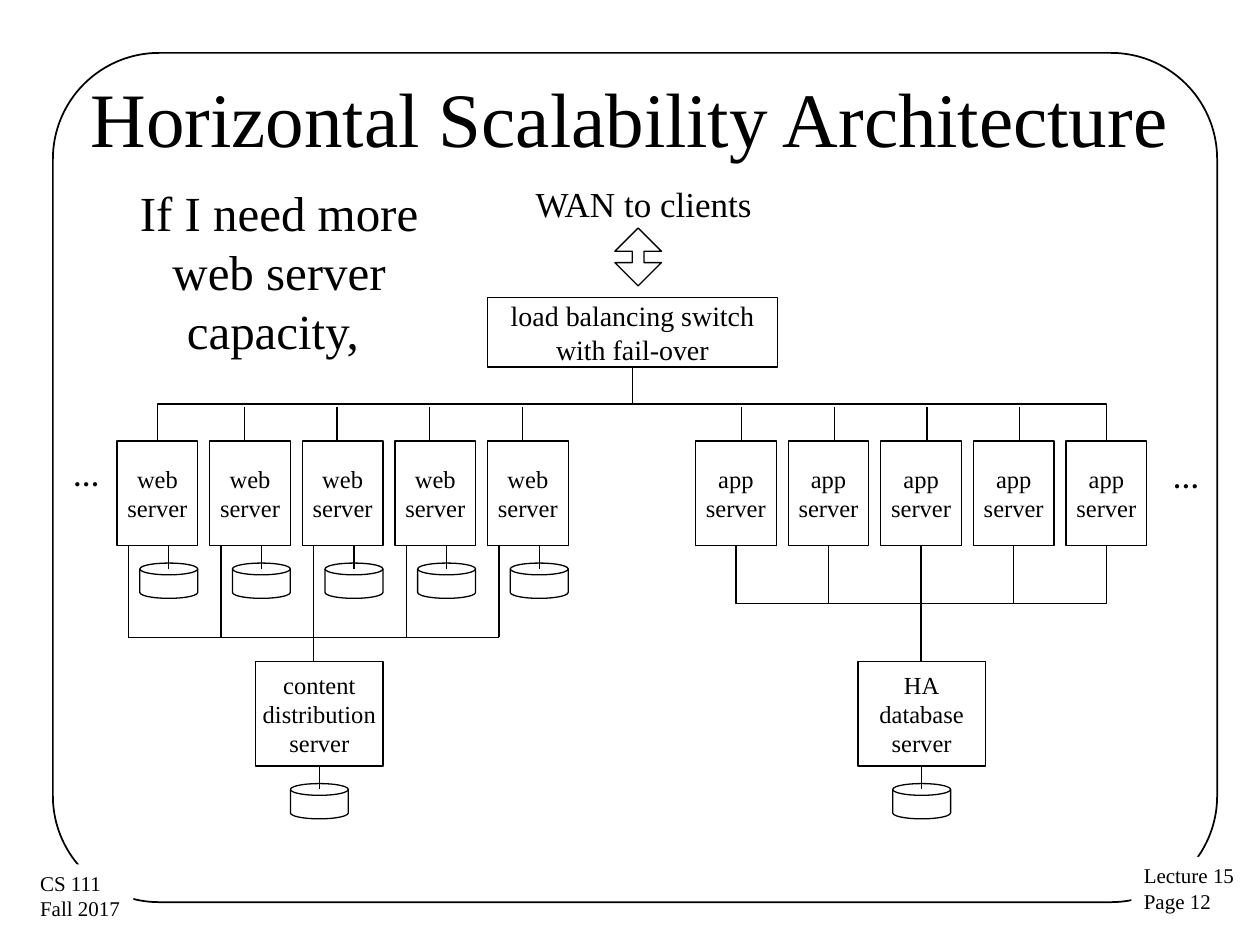
from dataclasses import dataclass
from typing import NamedTuple

from lxml import etree
from pptx import Presentation
from pptx.dml.color import RGBColor
from pptx.enum.shapes import MSO_CONNECTOR, MSO_SHAPE
from pptx.enum.text import MSO_ANCHOR, PP_ALIGN
from pptx.oxml.ns import qn
from pptx.util import Pt

RECT = MSO_SHAPE.RECTANGLE
ROUNDED = MSO_SHAPE.ROUNDED_RECTANGLE
DISK = MSO_SHAPE.FLOWCHART_MAGNETIC_DISK
ARROW = MSO_SHAPE.UP_DOWN_ARROW
STRAIGHT, ELBOW = MSO_CONNECTOR.STRAIGHT, MSO_CONNECTOR.ELBOW
TOP, MIDDLE = MSO_ANCHOR.TOP, MSO_ANCHOR.MIDDLE
LEFT, CENTER = PP_ALIGN.LEFT, PP_ALIGN.CENTER


@dataclass(frozen=True)
class Theme:
    font: str = "Times New Roman"
    ink: RGBColor = RGBColor(0, 0, 0)
    paper: RGBColor = RGBColor(255, 255, 255)
    title: float = 44
    remark: float = 28
    wan: float = 20
    switch: float = 16
    dots: float = 15
    server: float = 14
    footer: float = 12
    line: float = 0.75
    frame: float = 1


class Box(NamedTuple):
    x: float
    y: float
    w: float
    h: float

    @property
    def cx(self) -> float:
        return self.x + self.w / 2

    @property
    def bottom(self) -> float:
        return self.y + self.h


class Label(NamedTuple):
    box: Box
    text: str
    size: float
    align: PP_ALIGN = LEFT
    anchor: MSO_ANCHOR = TOP
    wrap: bool = False
    bold: bool = False
    inset: tuple = (7.92, 4.32)


T = Theme()
COUNT, PITCH = 5, 52.92
SERVER_TOP, SERVER_W, SERVER_H = 252, 46.08, 59.76
WEB_X, APP_X = 66.96, 397.5
TAP_TOP, CONTENT_BUS = 232.5, 364.3
DISK_W, DISK_H, DISK_GAP, STUB = 33.12, 20.16, 10, 13.2
SWITCH = Box(278.64, 169.92, 165.6, 39.84)
CONTENT = Box(146.16, 378, 72.72, SERVER_H)
DATABASE = Box(490.32, 378, 72.72, SERVER_H)

LABELS = [
    Label(Box(36, 21.6, 648, 90), "Horizontal Scalability Architecture",
          T.title, CENTER, MIDDLE, True, inset=(7.2, 3.6)),
    Label(Box(298.08, 100.08, 140.4, 32.4), "WAN to clients", T.wan),
    Label(Box(662.4, 259.92, 31.68, 26.64), "…", T.dots, bold=True),
    Label(Box(33.84, 258.48, 31.68, 26.64), "…", T.dots, bold=True),
    Label(Box(56.16, 100.8, 206.64, 108.72),
          "If I need more web server capacity, ", T.remark, CENTER,
          wrap=True, inset=(7.2, 3.6)),
]
FOOTERS = [
    Label(Box(646.56, 489.6, 66.96, 36.72), "Lecture 15\nPage 12",
          T.footer, inset=(7.2, 3.6)),
    Label(Box(15.84, 493.92, 60.48, 36.72), "CS 111\nFall 2017",
          T.footer, inset=(7.2, 3.6)),
]


def row(x: float) -> list[Box]:
    return [Box(x + i * PITCH, SERVER_TOP, SERVER_W, SERVER_H)
            for i in range(COUNT)]


def write(sp, label: Label) -> None:
    tf = sp.text_frame
    across, down = label.inset
    frame_format = {
        "margin_left": Pt(across), "margin_right": Pt(across),
        "margin_top": Pt(down), "margin_bottom": Pt(down),
        "word_wrap": label.wrap, "vertical_anchor": label.anchor,
    }
    for name, value in frame_format.items():
        setattr(tf, name, value)
    tf.text = label.text
    font_format = {"name": T.font, "size": Pt(label.size), "bold": label.bold}
    for p in tf.paragraphs:
        p.alignment = label.align
        for r in p.runs:
            for name, value in font_format.items():
                setattr(r.font, name, value)
            r.font.color.rgb = T.ink


def add_text(s, label: Label) -> None:
    write(s.shapes.add_textbox(*map(Pt, label.box)), label)


def add_outline(s, kind: MSO_SHAPE, box: Box, width: float = T.line):
    sp = s.shapes.add_shape(kind, *map(Pt, box))
    sp.shadow.inherit = False
    sp.fill.background()
    sp.line.color.rgb = T.ink
    sp.line.width = Pt(width)
    return sp


def add_node(s, box: Box, text: str, size: float = T.server) -> None:
    write(add_outline(s, RECT, box), Label(box, text, size, CENTER, MIDDLE))


def add_footer(s, label: Label) -> None:
    sp = add_outline(s, RECT, label.box)
    sp.fill.solid()
    sp.fill.fore_color.rgb = T.paper
    sp.line.fill.background()
    write(sp, label)


def add_line(s, x1: float, y1: float, x2: float, y2: float,
             kind: MSO_CONNECTOR = STRAIGHT):
    line = s.shapes.add_connector(kind, Pt(x1), Pt(y1), Pt(x2), Pt(y2))
    line.line.color.rgb = T.ink
    line.line.width = Pt(T.line)
    etree.SubElement(line._element.spPr, qn("a:effectLst"))
    return line


def add_elbow(s, x1: float, y1: float, x2: float, y2: float) -> None:
    rising, rightward = y2 < y1, x2 > x1
    cx, cy = (x1 + x2) / 2, (y1 + y2) / 2
    half_w, half_h = abs(y2 - y1) / 2, abs(x2 - x1) / 2
    if rising and not rightward:
        half_w = -half_w
    line = add_line(s, cx - half_w, cy - half_h, cx + half_w, cy + half_h, ELBOW)
    degrees = 270 if rightward else 90
    line._element.spPr.find(qn("a:xfrm")).set("rot", str(degrees * 60000))


def add_disk(s, cx: float, node_bottom: float) -> None:
    add_outline(s, DISK, Box(cx - DISK_W / 2, node_bottom + DISK_GAP, DISK_W, DISK_H))
    add_line(s, cx, node_bottom + STUB, cx, node_bottom)


def add_web_tier(s, servers: list[Box]) -> None:
    drops = [box.x + 6.48 for box in servers]
    for box, drop in zip(servers, drops):
        add_node(s, box, "web\nserver")
        add_disk(s, box.x + 29.52, box.bottom)
        add_line(s, drop, CONTENT_BUS, drop, box.bottom)
    for box in servers[1:]:
        tap = box.x + 19.8
        add_line(s, tap, box.y, tap, TAP_TOP)
    add_line(s, drops[0], CONTENT_BUS, drops[-1], CONTENT_BUS)
    add_line(s, drops[2], CONTENT.y, drops[2], CONTENT_BUS)


def add_app_tier(s, servers: list[Box]) -> None:
    hub = servers[2].cx
    for box in servers:
        add_node(s, box, "app\nserver")
        connect = add_line if box.cx == hub else add_elbow
        connect(s, hub, DATABASE.y, box.cx, box.bottom)
    for box in servers[:-1]:
        tap = box.x + 26.4
        add_line(s, tap, box.y, tap, TAP_TOP)


def main() -> None:
    prs = Presentation()
    prs.slide_width, prs.slide_height = Pt(720), Pt(540)
    s = prs.slides.add_slide(prs.slide_layouts[6])
    frame = add_outline(s, ROUNDED, Box(30.24, 30.24, 665.28, 485.28), T.frame)
    frame.adjustments[0] = 0.125
    for label in FOOTERS:
        add_footer(s, label)
    for label in LABELS:
        add_text(s, label)
    arrow = add_outline(s, ARROW, Box(351.36, 130.32, 26.64, 33.12))
    arrow.adjustments[0], arrow.adjustments[1] = 0.5, 0.25
    add_node(s, SWITCH, "load balancing switch\nwith fail-over", T.switch)
    web, app = row(WEB_X), row(APP_X)
    add_web_tier(s, web)
    add_app_tier(s, app)
    add_elbow(s, SWITCH.cx, SWITCH.bottom, web[0].cx, SERVER_TOP)
    add_elbow(s, app[-1].cx, SERVER_TOP, SWITCH.cx, SWITCH.bottom)
    add_node(s, CONTENT, "content\ndistribution\nserver")
    add_node(s, DATABASE, "HA\ndatabase\nserver")
    for box in (CONTENT, DATABASE):
        add_disk(s, box.cx, box.bottom)
    prs.save("out.pptx")


if __name__ == "__main__":
    main()
